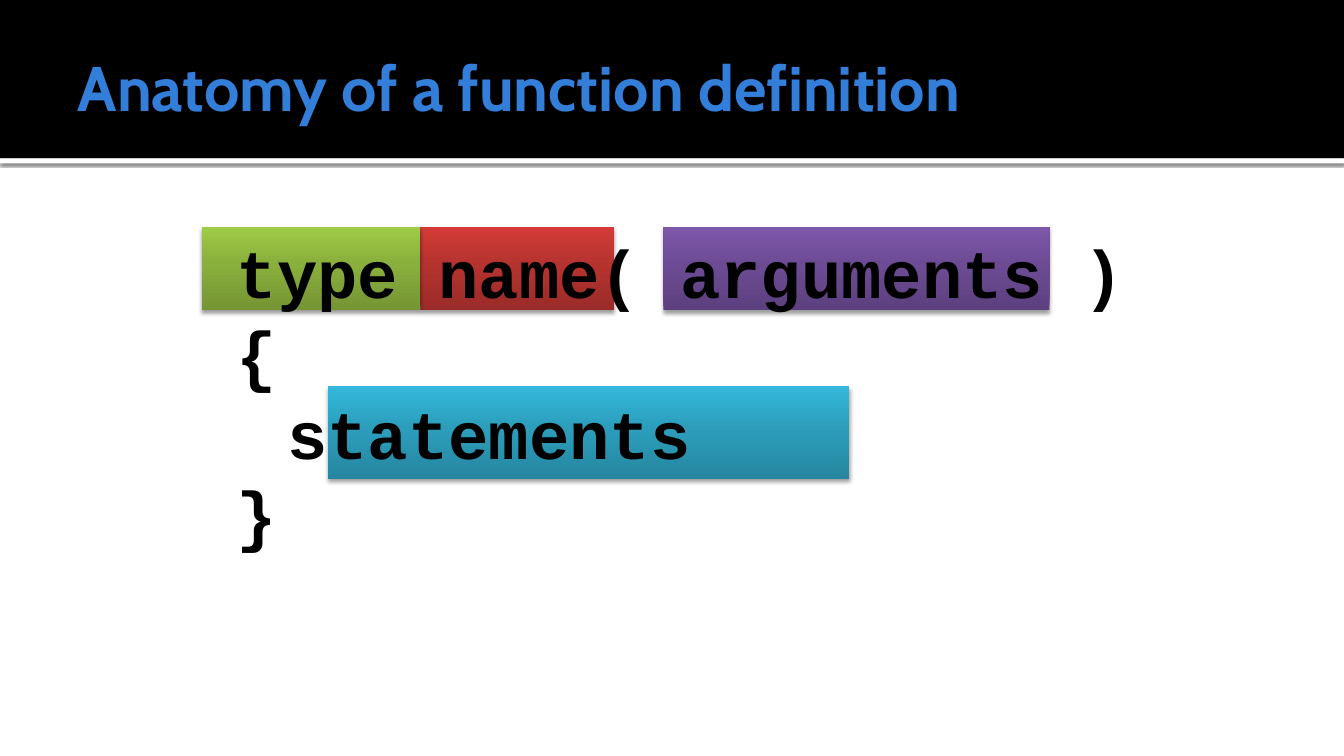
from pptx import Presentation
from pptx.dml.color import RGBColor as RGB
from pptx.enum.shapes import MSO_SHAPE as Shape
from pptx.enum.text import MSO_ANCHOR as Anchor, PP_ALIGN as Align
from pptx.oxml import parse_xml
from pptx.oxml.ns import nsdecls
from pptx.util import Inches, Pt

BLACK = RGB(0x00, 0x00, 0x00)
WHITE = RGB(0xFF, 0xFF, 0xFF)
BLUE = RGB(0x33, 0x7E, 0xD9)
RED = RGB(0x9A, 0x2B, 0x28), RGB(0xB5, 0x33, 0x2F), RGB(0xD3, 0x3B, 0x37)
GREEN = RGB(0x75, 0x94, 0x33), RGB(0x89, 0xAF, 0x3C), RGB(0xA0, 0xCB, 0x46)
PURPLE = RGB(0x5C, 0x40, 0x7E), RGB(0x6C, 0x4B, 0x94), RGB(0x7E, 0x58, 0xAC)
CYAN = RGB(0x26, 0x86, 0xA0), RGB(0x2C, 0x9E, 0xBC), RGB(0x34, 0xB8, 0xDB)

TITLE = "Anatomy of a function definition"
CODE = ["type name( arguments )", "{", "\tstatements", "}"]
PARTS = [
    ((4.17, 2.25, 1.92, 0.83), RED),
    ((2, 2.25, 2.17, 0.83), GREEN),
    ((6.58, 2.25, 3.83, 0.83), PURPLE),
    ((3.25, 3.83, 5.17, 0.92), CYAN),
]
STOPS = 0, 55, 100
WIDE, HEAD = 13.33, 1.57


def add_rect(slide, at):
    """Add a rectangle with no outline and no shadow."""
    box = slide.shapes.add_shape(Shape.RECTANGLE, *map(Inches, at))
    box.line.fill.background()
    box.shadow.inherit = False
    return box


def add_band(slide, at, color):
    """Add a rectangle in one plain colour."""
    band = add_rect(slide, at)
    band.fill.solid()
    band.fill.fore_color.rgb = color
    return band


def shade(box, blur, dist, alpha):
    """Give a shape a black shadow that falls straight down."""
    box.element.spPr.find("{*}effectLst").append(parse_xml(
        f'<a:outerShdw {nsdecls("a")} blurRad="{Pt(blur)}" dist="{Pt(dist)}" '
        f'dir="5400000" rotWithShape="0"><a:srgbClr val="{BLACK}">'
        f'<a:alpha val="{alpha * 1000}"/></a:srgbClr></a:outerShdw>'))


def blend(box, colors):
    """Fill a shape with a gradient that rises from the bottom."""
    stops = "".join(
        f'<a:gs pos="{pos * 1000}"><a:srgbClr val="{color}"/></a:gs>'
        for pos, color in zip(STOPS, colors))
    box.element.spPr.find("{*}ln").addprevious(parse_xml(
        f'<a:gradFill {nsdecls("a")} rotWithShape="1"><a:gsLst>{stops}</a:gsLst>'
        '<a:lin ang="16200000" scaled="0"/></a:gradFill>'))


def add_text(par, text, font, size, color):
    """Add one bold run to a left-aligned paragraph."""
    par.alignment = Align.LEFT
    run = par.add_run()
    run.text = text
    run.font.name, run.font.size, run.font.bold = font, Pt(size), True
    run.font.color.rgb = color


def set_title(slide, band):
    """Place the title on top of the header band."""
    title = slide.shapes.title
    band.element.addnext(title.element)
    title.left, title.top = Inches(0.67), Inches(0.17)
    title.width, title.height = Inches(12), Inches(1.37)
    frame = title.text_frame
    frame.vertical_anchor = Anchor.MIDDLE
    frame.margin_left = Inches(0.1)
    frame.margin_right = frame.margin_top = frame.margin_bottom = Inches(0.05)
    add_text(frame.paragraphs[0], TITLE, "Cabin", 45, BLUE)


def add_code(slide):
    """Write the code lines over the coloured parts."""
    box = slide.shapes.add_textbox(*map(Inches, (2.25, 2.17, 9.42, 3.33)))
    frame = box.text_frame
    frame.word_wrap = True
    frame.margin_top, frame.margin_bottom = Inches(0.13), 0
    for i, line in enumerate(CODE):
        par = frame.add_paragraph() if i else frame.paragraphs[0]
        par.line_spacing = Pt(57.4)
        add_text(par, line, "Courier New", 48, BLACK)


def main():
    """Build the slide and save it."""
    deck = Presentation()
    deck.slide_width, deck.slide_height = Inches(WIDE), Inches(7.5)
    slide = deck.slides.add_slide(deck.slide_layouts[5])
    shade(add_band(slide, (0, HEAD, WIDE, 0.05), WHITE), 2.5, 0.8, 60)
    set_title(slide, add_band(slide, (0, 0, WIDE, HEAD), BLACK))
    for at, colors in PARTS:
        part = add_rect(slide, at)
        blend(part, colors)
        shade(part, 3.1, 2, 38)
    add_code(slide)
    deck.save("out.pptx")


if __name__ == "__main__":
    main()
